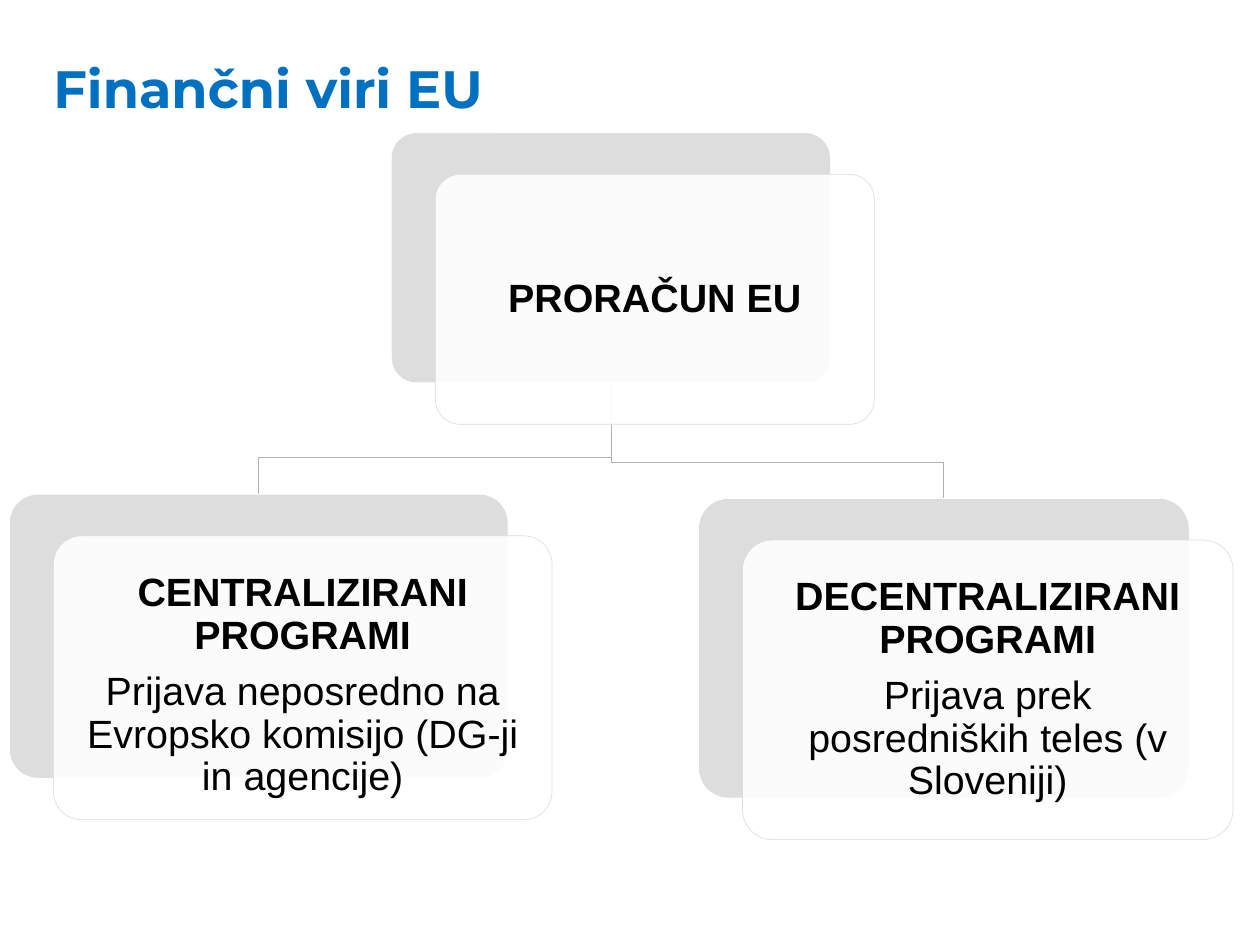
"""Build the slide on EU funding sources as a three-box hierarchy."""
from pptx import Presentation
from pptx.dml.color import RGBColor
from pptx.enum import shapes, text
from pptx.oxml.ns import qn
from pptx.util import Inches, Pt
from lxml import etree

BLUE = RGBColor(0x00, 0x70, 0xC0)
BLACK = RGBColor(0x00, 0x00, 0x00)
WHITE = RGBColor(0xFF, 0xFF, 0xFF)
GREY = RGBColor(0xDD, 0xDD, 0xDD)
LINE_GREY = RGBColor(0xB1, 0xB1, 0xB1)

TITLE = "Finančni viri EU"
ROOT = {"box": (8.28, 2.81, 9.29, 5.29), "heading": "PRORAČUN EU", "detail": None, "drop": 0}
BRANCHES = [
    {"box": (0.2, 10.46, 10.55, 6.01), "heading": "CENTRALIZIRANI PROGRAMI",
     "detail": "Prijava neposredno na Evropsko komisijo (DG-ji in agencije)", "drop": 0.34},
    {"box": (14.78, 10.55, 10.38, 6.34), "heading": "DECENTRALIZIRANI PROGRAMI",
     "detail": "Prijava prek posredniških teles (v Sloveniji)", "drop": 0},
]
CARD_SHIFT = (0.93, 0.88)
CARD_INSET = 0.42
BEND_ABOVE_BRANCH = 0.77


def add_title(slide):
    box = slide.shapes.add_textbox(Inches(1.13), Inches(0.55), Inches(24.41), Inches(3.89))
    frame = box.text_frame
    frame.word_wrap = True
    frame.margin_left = frame.margin_right = frame.margin_bottom = 0
    frame.margin_top = Inches(0.85)
    frame.text = TITLE
    paragraph = frame.paragraphs[0]
    paragraph.line_spacing = Pt(80)
    font = paragraph.runs[0].font
    font.name, font.size, font.bold = "Montserrat", Pt(80), True
    font.color.rgb = BLUE


def add_branch_line(slide, root, branch):
    left, top, width, height = root
    start_x, start_y = left + width / 2, top + height
    end_x, end_y = branch[0] + branch[2] / 2, branch[1]
    bend_y = end_y - BEND_ABOVE_BRANCH
    builder = slide.shapes.build_freeform(Inches(start_x), Inches(start_y))
    corners = [(start_x, bend_y), (end_x, bend_y), (end_x, end_y)]
    builder.add_line_segments([(Inches(x), Inches(y)) for x, y in corners], close=False)
    shape = builder.convert_to_shape()
    shape.shadow.inherit = False
    shape.fill.background()
    shape.line.color.rgb = LINE_GREY
    shape.line.width = Pt(1)


def add_rounded(slide, box, fill, line):
    shape = slide.shapes.add_shape(
        shapes.MSO_SHAPE.ROUNDED_RECTANGLE, *[Inches(value) for value in box])
    shape.adjustments[0] = 0.1
    shape.shadow.inherit = False
    shape.fill.solid()
    shape.fill.fore_color.rgb = fill
    shape.line.color.rgb = line
    shape.line.width = Pt(1)
    return shape


def add_node(slide, node):
    left, top, width, height = node["box"]
    add_rounded(slide, node["box"], GREY, WHITE)
    card = add_rounded(
        slide, (left + CARD_SHIFT[0], top + CARD_SHIFT[1], width, height), WHITE, GREY)
    color = card.fill._xPr.find(qn("a:solidFill"))[0]
    etree.SubElement(color, qn("a:alpha"), val="90000")

    frame = card.text_frame
    frame.word_wrap = True
    frame.vertical_anchor = text.MSO_ANCHOR.MIDDLE
    frame.margin_left = frame.margin_right = frame.margin_bottom = Inches(CARD_INSET)
    frame.margin_top = Inches(CARD_INSET + node["drop"])
    frame.text = "\n".join(filter(None, (node["heading"], node["detail"])))
    for index, paragraph in enumerate(frame.paragraphs):
        paragraph.alignment = text.PP_ALIGN.CENTER
        paragraph.line_spacing = 0.9
        paragraph.space_before = Pt(21 if index else 0)
        font = paragraph.runs[0].font
        font.name, font.size, font.bold = "Arial", Pt(60), index == 0
        font.color.rgb = BLACK


def main():
    presentation = Presentation()
    presentation.slide_width = Inches(26.66)
    presentation.slide_height = Inches(20)
    slide = presentation.slides.add_slide(presentation.slide_layouts[6])
    add_title(slide)
    for branch in BRANCHES:
        add_branch_line(slide, ROOT["box"], branch["box"])
    for node in [ROOT, *BRANCHES]:
        add_node(slide, node)
    presentation.save("out.pptx")


if __name__ == "__main__":
    main()
